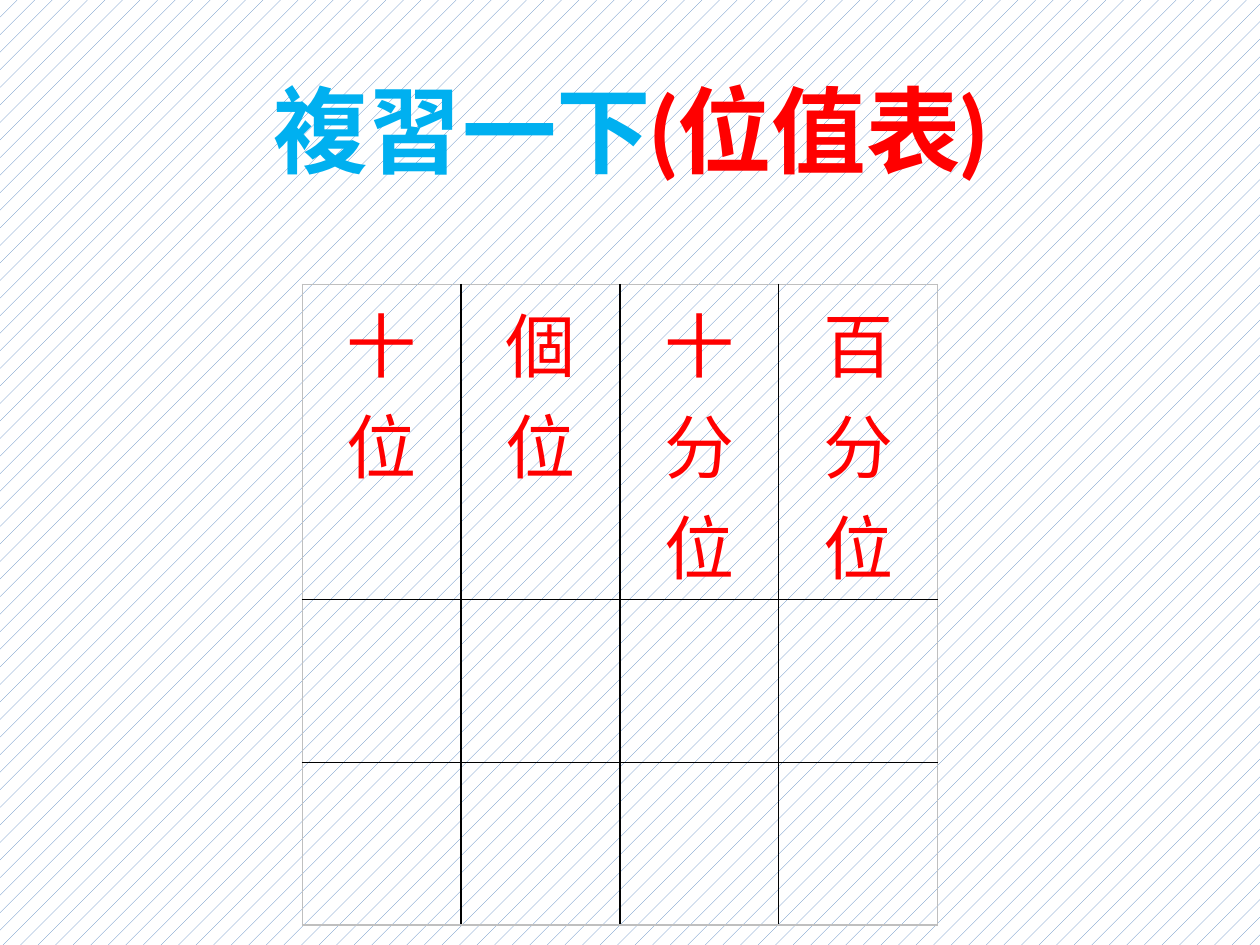
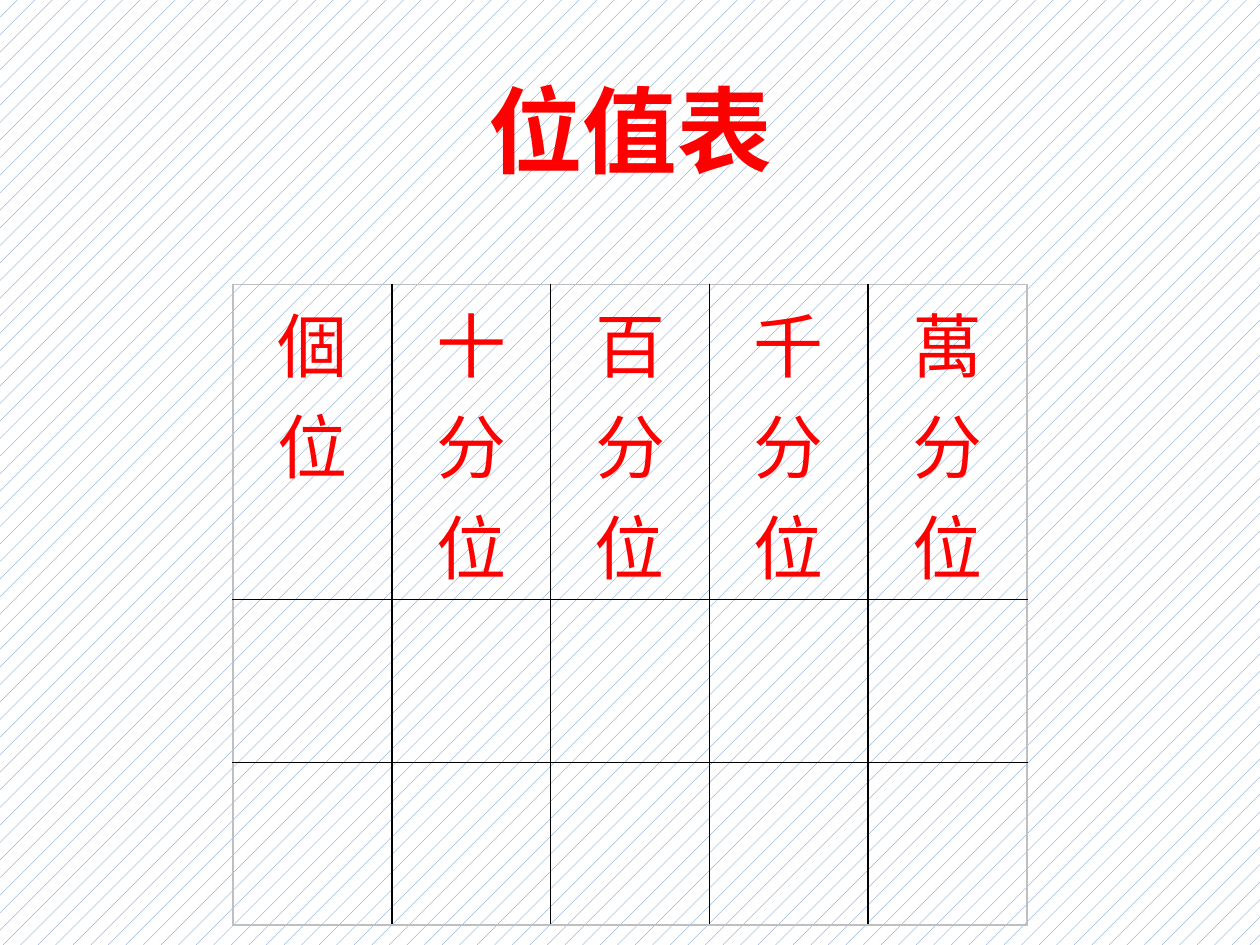
from lxml import etree
from pptx import Presentation
from pptx.dml.color import RGBColor
from pptx.enum.dml import MSO_PATTERN
from pptx.enum.text import MSO_ANCHOR, PP_ALIGN
from pptx.oxml.ns import qn
from pptx.util import Inches, Pt

CENTER = PP_ALIGN.CENTER
MIDDLE = MSO_ANCHOR.MIDDLE
DOTS = MSO_PATTERN.PERCENT_5

RED, SKY, BLUE, WHITE = "FF0000", "00B0F0", "4F81BD", "FFFFFF"
GRID, FRAME = "000000", "BFBFBF"
COLUMN = 1.26
ROW_HEIGHTS = [2.5, 1.29, 1.29]


def color(value):
    return RGBColor.from_string(value)


def add_border(cell, side, value):
    line = etree.SubElement(cell._tc.get_or_add_tcPr(), qn(f"a:{side}"), w=str(Pt(1)))
    fill = etree.SubElement(line, qn("a:solidFill"))
    etree.SubElement(fill, qn("a:srgbClr"), val=value)


lessons = [
    ([("複習一下", SKY), ("(位值表)", RED)], 2.4,
     ["十位", "個位", "十分位", "百分位"]),
    ([("位值表", RED)], 1.85,
     ["個位", "十分位", "百分位", "千分位", "萬分位"]),
]

prs = Presentation()
prs.slide_width = Inches(10)
prs.slide_height = Inches(7.5)

for title_parts, left, places in lessons:
    slide = prs.slides.add_slide(prs.slide_layouts[6])
    backdrop = slide.background.fill
    backdrop.patterned()
    backdrop.pattern = DOTS
    backdrop.fore_color.rgb = color(BLUE)
    backdrop.back_color.rgb = color(WHITE)

    title = slide.shapes.add_textbox(Inches(0.5), Inches(0.12), Inches(9), Inches(1.81)).text_frame
    title.word_wrap = True
    title.vertical_anchor = MIDDLE
    heading = title.paragraphs[0]
    heading.alignment = CENTER
    heading.font.name = "Lato"
    heading.font.size = Pt(54)
    heading.font.bold = True
    for words, tint in title_parts:
        part = heading.add_run()
        part.text = words
        part.font.color.rgb = color(tint)

    count, last_row = len(places), len(ROW_HEIGHTS) - 1
    place_table = slide.shapes.add_table(
        len(ROW_HEIGHTS), count, Inches(left), Inches(2.26),
        Inches(COLUMN * count), Inches(sum(ROW_HEIGHTS))).table
    place_table.first_row = False
    place_table.horz_banding = False
    for column in place_table.columns:
        column.width = Inches(COLUMN)

    for r, height in enumerate(ROW_HEIGHTS):
        place_table.rows[r].height = Inches(height)
        for c, place in enumerate(places):
            cell = place_table.cell(r, c)
            outer_sides = {"lnL": c == 0, "lnR": c == count - 1, "lnT": r == 0, "lnB": r == last_row}
            for side, is_outer in outer_sides.items():
                add_border(cell, side, FRAME if is_outer else GRID)
            cell.fill.background()
            if r == 0:
                cell.text = place
                label = cell.text_frame.paragraphs[0]
                label.alignment = CENTER
                label.font.name = "Calibri"
                label.font.size = Pt(40)
                label.font.color.rgb = color(RED)

prs.save("out.pptx")
